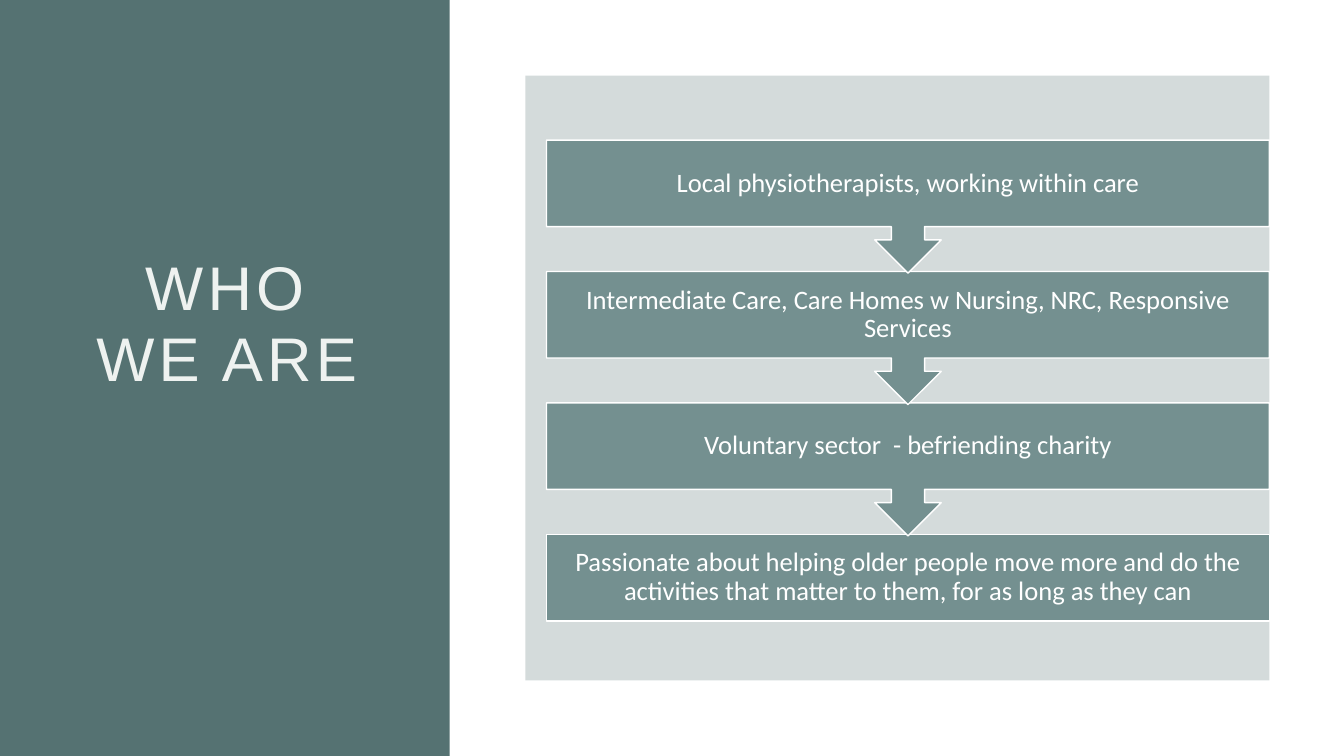
from pptx import Presentation
from pptx.dml.color import RGBColor
from pptx.enum.shapes import MSO_SHAPE
from pptx.enum.text import MSO_ANCHOR, PP_ALIGN
from pptx.oxml.ns import qn
from pptx.util import Inches, Pt
from lxml.etree import SubElement

TEAL = RGBColor(0x55, 0x72, 0x72)
SAGE = RGBColor(0x74, 0x90, 0x90)
PALE = RGBColor(0xEE, 0xF2, 0xF0)
WHITE = RGBColor(0xFF, 0xFF, 0xFF)

STEPS = [
    "Local physiotherapists, working within care",
    "Intermediate Care, Care Homes w Nursing, NRC, Responsive Services",
    "Voluntary sector  - befriending charity",
    "Passionate about helping older people move more and do the "
    "activities that matter to them, for as long as they can",
]
LEFT, WIDTH = 5.42, 7.17
FIRST, LAST = 1.39, 5.3
BAR, CALL = 0.86, 1.32


def add_block(slide, kind, area, fill, line=None):
    """Draw a filled shape, outlined only when a line colour is given."""
    shape = slide.shapes.add_shape(kind, *map(Inches, area))
    shape.shadow.inherit = False
    shape.fill.solid()
    shape.fill.fore_color.rgb = fill
    if line is None:
        shape.line.fill.background()
    else:
        shape.line.color.rgb = line
        shape.line.width = Pt(1)
    return shape


def set_alpha(shape, share):
    """Make the fill of a shape partly clear, share being a percentage."""
    color = shape.fill._xPr.find(qn("a:solidFill"))[0]
    SubElement(color, qn("a:alpha")).set("val", str(share * 1000))


def add_label(slide, text, area, pads, face, size, color, space):
    """Place centred text in a box and return its run."""
    frame = slide.shapes.add_textbox(*map(Inches, area)).text_frame
    frame.word_wrap = True
    frame.vertical_anchor = MSO_ANCHOR.MIDDLE
    (frame.margin_left, frame.margin_top,
     frame.margin_right, frame.margin_bottom) = map(Inches, pads)
    para = frame.paragraphs[0]
    para.alignment = PP_ALIGN.CENTER
    para.line_spacing = space
    run = para.add_run()
    run.text = text
    run.font.name = face
    run.font.size = Pt(size)
    run.font.color.rgb = color
    return run


def add_step(slide, text, top, final):
    """Draw one step, with an arrow to the next unless it is final."""
    if final:
        add_block(slide, MSO_SHAPE.RECTANGLE, (LEFT, top, WIDTH, BAR),
                  SAGE, WHITE)
    else:
        call = add_block(slide, MSO_SHAPE.UP_ARROW_CALLOUT,
                         (LEFT, top, WIDTH, CALL), SAGE, WHITE)
        call.rotation = 180
    add_label(slide, text, (LEFT, top, WIDTH, BAR), (0.15,) * 4,
              "Calibri", 19, WHITE, 0.9)


def main():
    """Build the slide and save it."""
    deck = Presentation()
    deck.slide_width, deck.slide_height = Inches(13.33), Inches(7.5)
    slide = deck.slides.add_slide(deck.slide_layouts[6])

    add_block(slide, MSO_SHAPE.RECTANGLE, (0, 0, 4.46, 7.5), TEAL)
    title = add_label(slide, "WHO WE ARE", (0.75, 1.5, 3, 4.5),
                      (0.1, 0.05, 0.1, 1.1), "Arial", 44, PALE, 0.96)
    title.font._element.set("spc", "300")

    panel = add_block(slide, MSO_SHAPE.RECTANGLE, (5.21, 0.75, 7.38, 6), TEAL)
    set_alpha(panel, 25)

    end = len(STEPS) - 1
    pitch = (LAST - FIRST) / end
    for row, text in reversed(list(enumerate(STEPS))):
        add_step(slide, text, FIRST + row * pitch, row == end)

    deck.save("out.pptx")


if __name__ == "__main__":
    main()
